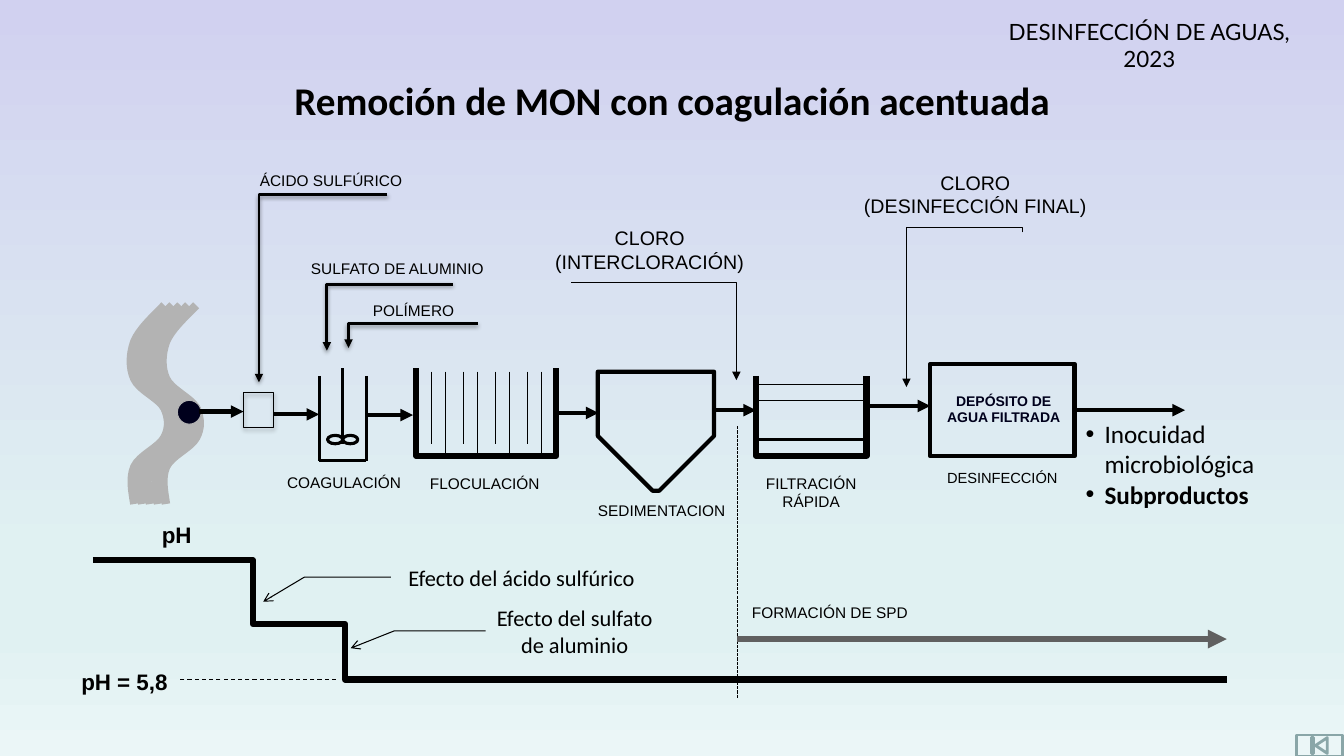
from dataclasses import dataclass

from lxml.etree import SubElement
from pptx import Presentation
from pptx.dml.color import RGBColor
from pptx.enum.dml import MSO_LINE
from pptx.enum.shapes import MSO_CONNECTOR, MSO_SHAPE
from pptx.enum.text import MSO_ANCHOR, MSO_AUTO_SIZE, PP_ALIGN
from pptx.oxml.ns import qn
from pptx.util import Pt


@dataclass(frozen=True)
class Theme:
    black: str = "000000"
    navy: str = "00001C"
    river: str = "B3B3B3"
    gray: str = "606060"
    button: str = "8AA6A8"
    background: tuple = ((0, "D1D1F0"), (74, "E0F1F2"), (83, "E0F1F2"), (100, "EBF6F7"))
    sans: str = "Arial"
    body: str = "Calibri"
    header: str = "Lato"
    title_size: float = 28
    list_size: float = 18
    large: float = 16
    medium: float = 14
    small: float = 11
    caption: float = 10.5
    tiny: float = 10


THEME = Theme()


# Text
def add_run(paragraph, text, size, font=THEME.sans, bold=False, color=THEME.black):
    run = paragraph.add_run()
    run.text = text
    run.font.size, run.font.name, run.font.bold = Pt(size), font, bold
    run.font.color.rgb = RGBColor.from_string(color)


def add_label(slide, box, text, size=THEME.small, font=THEME.sans, bold=False, centred=False,
              color=THEME.black):
    frame = slide.shapes.add_textbox(*map(Pt, box)).text_frame
    frame.word_wrap = True
    paragraph = frame.paragraphs[0]
    paragraph.alignment = PP_ALIGN.CENTER if centred else PP_ALIGN.LEFT
    add_run(paragraph, text, size, font, bold, color)


def place(shape, box):
    shape.left, shape.top, shape.width, shape.height = map(Pt, box)
    frame = shape.text_frame
    frame.word_wrap, frame.auto_size = True, MSO_AUTO_SIZE.NONE
    frame.vertical_anchor = MSO_ANCHOR.TOP
    return frame


def add_title(slide, text):
    paragraph = place(slide.shapes.title, (0, 50.8, 960, 41)).paragraphs[0]
    paragraph.alignment = PP_ALIGN.CENTER
    paragraph.space_before = paragraph.space_after = Pt(6)
    add_run(paragraph, text, THEME.title_size, THEME.body, True)


def add_bullets(slide, box, items):
    frame = place(slide.placeholders[1], box)
    for index, (text, bold) in enumerate(items):
        paragraph = frame.add_paragraph() if index else frame.paragraphs[0]
        paragraph.space_before = Pt(0)
        properties = paragraph._p.get_or_add_pPr()
        properties.set("marL", str(Pt(13.5)))
        properties.set("indent", str(Pt(-13.5)))
        SubElement(properties, qn("a:buFont"), typeface=THEME.sans)
        SubElement(properties, qn("a:buChar"), char="•")
        add_run(paragraph, text, THEME.list_size, THEME.body, bold)


# Lines and outlines
def style_line(shape, width, color=THEME.black, dash=None, arrow=None):
    shape.line.width = Pt(width)
    shape.line.color.rgb = RGBColor.from_string(color)
    if dash:
        shape.line.dash_style = dash
    if arrow:
        SubElement(shape.line._get_or_add_ln(), qn("a:tailEnd"), type=arrow)


def set_effects(shape, shadow=False):
    properties = shape._element.spPr
    for old in properties.findall(qn("a:effectLst")):
        properties.remove(old)
    effects = SubElement(properties, qn("a:effectLst"))
    if shadow:
        outer = SubElement(effects, qn("a:outerShdw"), blurRad=str(Pt(3.1)), dist=str(Pt(1.6)),
                           dir="5400000", rotWithShape="0")
        color = SubElement(outer, qn("a:srgbClr"), val=THEME.black)
        SubElement(color, qn("a:alpha"), val="38000")


def add_line(slide, start, end, width, shadow=False, kind=MSO_CONNECTOR.STRAIGHT, **style):
    line = slide.shapes.add_connector(kind, *map(Pt, (*start, *end)))
    style_line(line, width, **style)
    set_effects(line, shadow)
    return line


def add_dose(slide, start, end, width, shadow=False):
    """Runs sideways, then down to its arrowhead."""
    line = add_line(slide, start, end, width, shadow, MSO_CONNECTOR.ELBOW, arrow="triangle")
    line._element.spPr.find(qn("a:prstGeom")).set("prst", "bentConnector2")


def add_step(slide, start, end, bend, width=4.5, **style):
    line = add_line(slide, start, end, width, kind=MSO_CONNECTOR.ELBOW, **style)
    guides = line._element.spPr.find(qn("a:prstGeom")).get_or_add_avLst()
    SubElement(guides, qn("a:gd"), name="adj1", fmla=f"val {bend}")
    return line


def add_polyline(slide, points, width, **style):
    first, *others = [(Pt(x), Pt(y)) for x, y in points]
    builder = slide.shapes.build_freeform(*first)
    builder.add_line_segments(others, close=False)
    shape = builder.convert_to_shape()
    shape.fill.background()
    style_line(shape, width, **style)
    set_effects(shape)
    return shape


def add_curve(slide, knots, width, color):
    """Turns every three line segments into one cubic curve."""
    shape = add_polyline(slide, knots, width, color=color)
    outline = next(shape._element.iter(qn("a:path")))
    segments = outline.findall(qn("a:lnTo"))
    for index in range(0, len(segments), 3):
        curve = SubElement(outline, qn("a:cubicBezTo"))
        for segment in segments[index:index + 3]:
            curve.append(segment[0])
            outline.remove(segment)


def add_outline(slide, kind, box, width, color=THEME.black, fill=None, shadow=False):
    shape = slide.shapes.add_shape(kind, *map(Pt, box))
    if fill:
        shape.fill.solid()
        shape.fill.fore_color.rgb = RGBColor.from_string(fill)
    else:
        shape.fill.background()
    style_line(shape, width, color)
    set_effects(shape, shadow)
    return shape


def add_basin(slide, left, top, right, bottom):
    add_polyline(slide, [(left, top), (left, bottom), (right, bottom), (right, top)], 4.5)


def set_background(slide):
    fill = slide.background.fill
    fill.gradient()
    fill.gradient_angle = 270
    stops = next(slide._element.iter(qn("a:gsLst")))
    stops.clear()
    for position, color in THEME.background:
        stop = SubElement(stops, qn("a:gs"), pos=str(position * 1000))
        SubElement(stop, qn("a:srgbClr"), val=color)


# Parts of the treatment plant
def add_river(slide):
    knots = [(117.5, 218), (108.7, 227), (99.5, 235.5), (96, 244), (92.6, 253.5), (92.6, 263),
             (96, 270.5), (99.5, 278.5), (114, 284.5), (117.5, 291.5), (121, 299), (121, 306),
             (117.5, 312.5), (114, 319.5), (99.5, 325.5), (96, 333.5), (92.6, 341.5),
             (94.5, 350.5), (96, 360)]
    for strand in range(5):
        add_curve(slide, [(x + strand * 5.65, y) for x, y in knots], 6, THEME.river)
    add_outline(slide, MSO_SHAPE.OVAL, (126.7, 286, 17, 17), 0.75, THEME.river, THEME.navy)


def add_tanks(slide):
    add_outline(slide, MSO_SHAPE.RECTANGLE, (174.2, 280.6, 21, 24.5), 0.75, shadow=True)
    # Mixer
    for start, end in (((228, 329), (261.5, 329)), ((228, 268.5), (228, 329)),
                       ((261.5, 268.5), (261.5, 329)), ((244.8, 317), (244.8, 263))):
        add_line(slide, start, end, 2.25)
    for left in (234, 244.8):
        add_outline(slide, MSO_SHAPE.OVAL, (left, 311, 10.8, 6), 2.25)
    # Flocculator with its baffles
    add_basin(slide, 297.4, 263, 397.4, 325.5)
    for pair in range(4):
        for offset, bottom in ((0, 317), (10, 325.5)):
            x = 308.2 + pair * 22.8 + offset
            add_line(slide, (x, 265.5), (x, bottom), 0.75)
    # Settler
    settler = add_outline(slide, MSO_SHAPE.SNIP_2_SAME_RECTANGLE, (427, 265.5, 83, 85), 3)
    settler.rotation = 180
    settler.adjustments[0], settler.adjustments[1] = 0.471, 0
    # Filter
    for top, height, width in ((274.5, 39.5, 1), (314, 11.5, 2.25), (286, 28, 0.75)):
        add_outline(slide, MSO_SHAPE.RECTANGLE, (540, top, 79, height), width)
    add_basin(slide, 540, 268.5, 619, 325.5)
    # Filtered water tank
    add_outline(slide, MSO_SHAPE.RECTANGLE, (664.5, 260, 103, 66), 3)
    add_label(slide, (665.4, 276.5, 103, 32), "DEPÓSITO DE AGUA FILTRADA", THEME.tiny,
              bold=True, centred=True, color=THEME.navy)
    # Flow between the stages
    for start, end, y in ((142, 174, 294), (196, 228, 296), (262, 295, 296.5), (398, 427.5, 295),
                          (510, 540, 293), (618, 664.5, 290), (767.5, 846.5, 293)):
        add_line(slide, (start, y), (end, y), 3, arrow="triangle")
    for text, box in (("COAGULACIÓN", (198, 334.5, 102, 21)),
                      ("FLOCULACIÓN", (300, 335, 106, 21)),
                      ("SEDIMENTACION", (420, 354.5, 119.5, 21))):
        add_label(slide, box, text)
    add_label(slide, (528.5, 334.8, 102, 34), "FILTRACIÓN RÁPIDA", centred=True)
    add_label(slide, (669.5, 331.6, 96.5, 20), "DESINFECCIÓN", THEME.caption)


def add_chemicals(slide):
    add_label(slide, (178.5, 119, 145, 21), "ÁCIDO SULFÚRICO")
    add_label(slide, (215, 181.5, 145, 21), "SULFATO DE ALUMINIO")
    add_label(slide, (259.2, 211.5, 81, 21), "POLÍMERO")
    for text, box in (("CLORO (INTERCLORACIÓN)", (386.3, 158, 155.5, 41)),
                      ("CLORO (DESINFECCIÓN FINAL)", (607.7, 118.4, 178, 41))):
        add_label(slide, box, text, THEME.medium, centred=True)
    for start, end in (((276.8, 139), (185, 273)), ((323.5, 203), (233.5, 250.5)),
                       ((341.3, 231.2), (249, 248.5))):
        add_dose(slide, start, end, 2, shadow=True)
    add_dose(slide, (408.2, 201.7), (526, 271.5), 0.75)
    final_dose = add_step(slide, (633.75, 179.75), (744.25, 262.75), -3000, 0.75, arrow="triangle")
    final_dose._element.spPr.find(qn("a:xfrm")).set("rot", "5400000")


def add_ph_profile(slide):
    add_step(slide, (66.4, 400.2), (245, 445.7), 63900)
    add_step(slide, (242, 445.7), (876.3, 485.3), 700)
    add_line(slide, (240, 485.3), (127, 485.3), 0.75, dash=MSO_LINE.DASH)
    add_line(slide, (526.5, 304.5), (526.5, 499), 0.75, dash=MSO_LINE.SQUARE_DOT)
    add_line(slide, (526.5, 456.5), (876.3, 456.5), 4.5, color=THEME.gray, arrow="triangle")
    add_polyline(slide, [(279.2, 412.3), (217.3, 412.3), (188, 429.8)], 0.75, arrow="arrow")
    add_polyline(slide, [(347, 450.7), (281.5, 450.7), (250.5, 463)], 0.75, arrow="arrow")
    add_label(slide, (108.5, 368.5, 42, 27), "pH", THEME.large, bold=True)
    add_label(slide, (51, 474, 88.5, 27), "pH = 5,8", THEME.large, bold=True)
    add_label(slide, (530, 427.5, 145, 21), "FORMACIÓN DE SPD")
    for text, box in (("Efecto del ácido sulfúrico", (283.5, 399.5, 178, 27)),
                      ("Efecto del sulfato de aluminio", (347, 428.3, 127, 46))):
        add_label(slide, box, text, THEME.large, THEME.body, centred=True)


def main():
    presentation = Presentation()
    presentation.slide_width, presentation.slide_height = Pt(960), Pt(540)
    slide = presentation.slides.add_slide(presentation.slide_layouts[1])
    set_background(slide)
    add_outline(slide, MSO_SHAPE.ACTION_BUTTON_BEGINNING, (926, 525, 33, 15), 2, THEME.button)
    add_label(slide, (707, 9.4, 228, 27), "DESINFECCIÓN DE AGUAS, 2023", THEME.large,
              THEME.header, centred=True)
    add_title(slide, "Remoción de MON con coagulación acentuada")
    add_chemicals(slide)
    add_river(slide)
    add_tanks(slide)
    add_bullets(slide, (768.3, 295.2, 158, 73),
                [("Inocuidad microbiológica", False), ("Subproductos", True)])
    add_ph_profile(slide)
    presentation.save("out.pptx")


if __name__ == "__main__":
    main()
